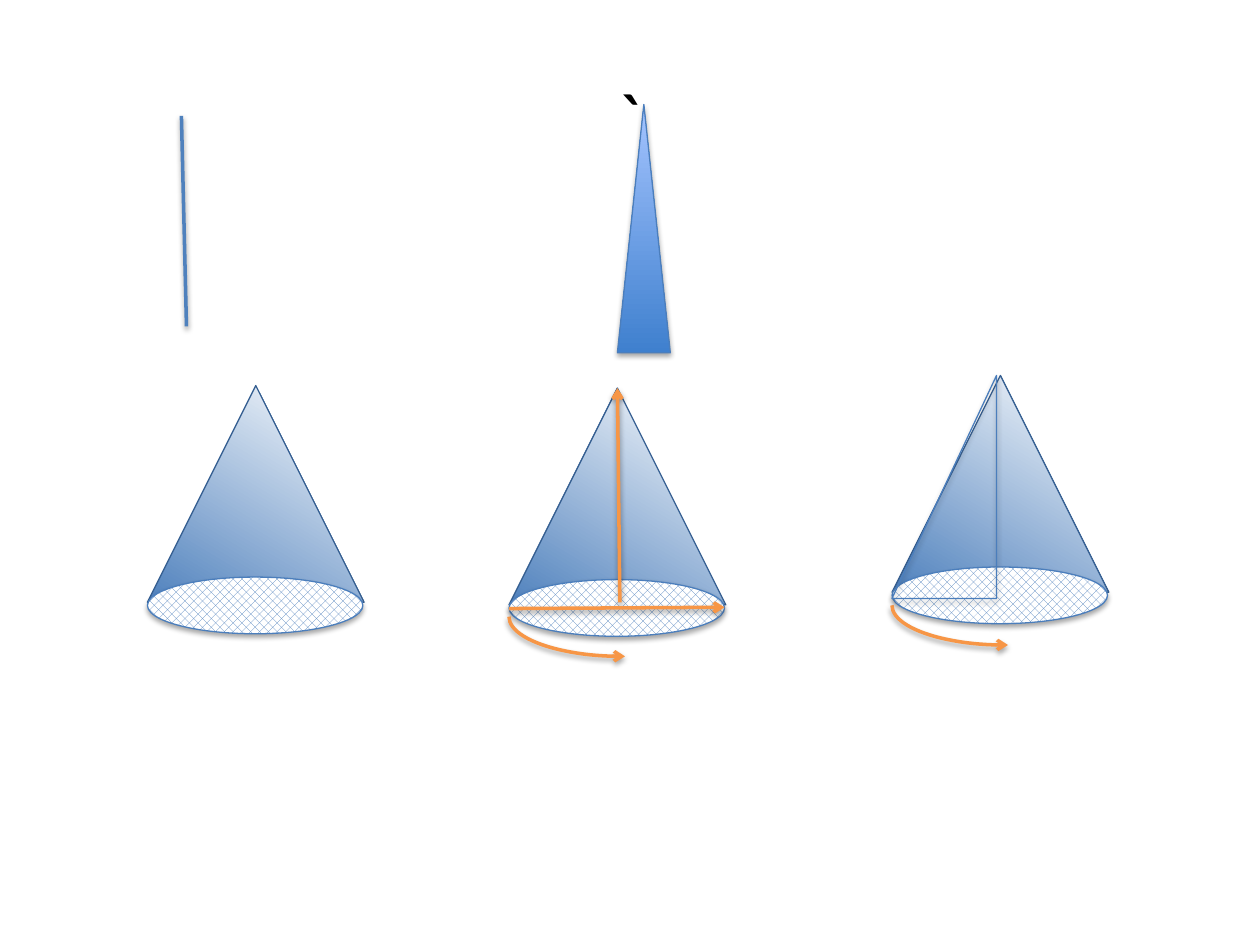
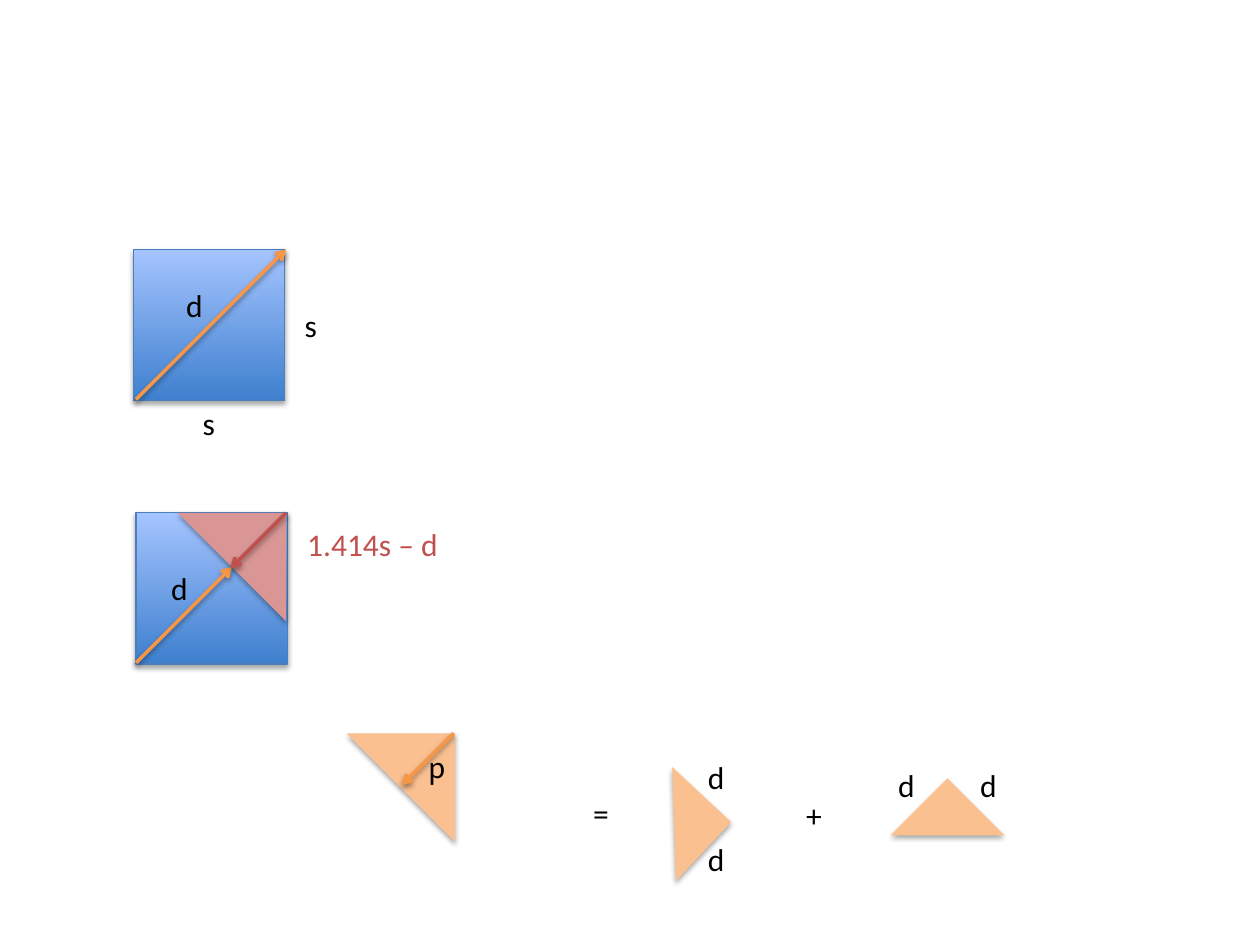
from dataclasses import dataclass

from lxml import etree
from pptx import Presentation
from pptx.dml.color import RGBColor
from pptx.enum.dml import MSO_PATTERN
from pptx.enum.shapes import MSO_CONNECTOR, MSO_SHAPE
from pptx.enum.text import MSO_ANCHOR, MSO_AUTO_SIZE, PP_ALIGN
from pptx.oxml.ns import qn
from pptx.util import Inches, Pt

RECT = MSO_SHAPE.RECTANGLE
OVAL = MSO_SHAPE.OVAL
ARC = MSO_SHAPE.ARC
PEAK = MSO_SHAPE.ISOSCELES_TRIANGLE
WEDGE = MSO_SHAPE.RIGHT_TRIANGLE
STRAIGHT = MSO_CONNECTOR.STRAIGHT
DOTS = MSO_PATTERN.PERCENT_50
LEFT, CENTER = PP_ALIGN.LEFT, PP_ALIGN.CENTER
TOP, MIDDLE = MSO_ANCHOR.TOP, MSO_ANCHOR.MIDDLE
FIT, FIXED = MSO_AUTO_SIZE.SHAPE_TO_FIT_TEXT, MSO_AUTO_SIZE.NONE


@dataclass(frozen=True)
class Theme:
    font: str = "Calibri"
    title: int = 44
    label: int = 18
    thin: float = 0.75
    thick: float = 2
    ink: str = "000000"
    white: str = "FFFFFF"
    blue: str = "4F81BD"
    edge: str = "4B7EBC"
    side: str = "376092"
    deep: str = "3F80CE"
    pale: str = "A4C4FF"
    orange: str = "F79646"
    peach: str = "FAC090"
    red: str = "C0504D"
    rose: str = "D99694"


THEME = Theme()


def rgb(code):
    return RGBColor.from_string(code)


def stroke(item, color, width):
    item.line.color.rgb = rgb(color)
    item.line.width = Pt(width)


def effect(item, blur=3.1, dist=1.8, alpha=35, show=True):
    box = etree.SubElement(item._element.spPr, qn("a:effectLst"))
    if not show:
        return
    cast = etree.SubElement(
        box, qn("a:outerShdw"), blurRad=str(Pt(blur)), dist=str(Pt(dist)),
        dir="5400000", rotWithShape="0")
    tint = etree.SubElement(cast, qn("a:srgbClr"), val=THEME.ink)
    etree.SubElement(tint, qn("a:alpha"), val=str(alpha * 1000))


def tip(item, end):
    line = item.line._get_or_add_ln()
    etree.SubElement(line, qn(f"a:{end}"), type="arrow")


def flip(item, *axes):
    frame = item._element.spPr.find(qn("a:xfrm"))
    for axis in axes:
        frame.set(f"flip{axis}", "1")


def shade(item, start, stop, angle):
    item.fill.gradient()
    item.fill.gradient_angle = angle
    for mark, color in zip(item.fill.gradient_stops, (start, stop)):
        mark.color.rgb = rgb(color)


def shape(slide, kind, x, y, w, h, fill=None, line=None,
          width=THEME.thin, turn=0, shadow=True):
    item = slide.shapes.add_shape(kind, Inches(x), Inches(y), Inches(w), Inches(h))
    item.rotation = turn
    if fill:
        item.fill.solid()
        item.fill.fore_color.rgb = rgb(fill)
    else:
        item.fill.background()
    if line:
        stroke(item, line, width)
    else:
        item.line.fill.background()
    effect(item, show=shadow)
    return item


def text(slide, words, x, y, w=0.33, h=0.4, size=THEME.label, color=THEME.ink,
         align=LEFT, anchor=TOP, wrap=False, turn=0):
    box = slide.shapes.add_textbox(Inches(x), Inches(y), Inches(w), Inches(h))
    box.rotation = turn
    frame = box.text_frame
    frame.word_wrap = wrap
    frame.auto_size = FIXED if wrap else FIT
    frame.vertical_anchor = anchor
    para = frame.paragraphs[0]
    para.alignment = align
    run = para.add_run()
    run.text = words
    run.font.name = THEME.font
    run.font.size = Pt(size)
    run.font.color.rgb = rgb(color)


def line(slide, start, end, color=THEME.orange, arrow=True):
    item = slide.shapes.add_connector(STRAIGHT, *map(Inches, start + end))
    stroke(item, color, THEME.thick)
    if arrow:
        tip(item, "tailEnd")
    effect(item, dist=1.6, alpha=38)


def cone(slide, x, y):
    body = shape(slide, PEAK, x, y, 1.72, 1.72, line=THEME.side, shadow=False)
    shade(body, THEME.blue, THEME.white, 59)
    base = shape(slide, OVAL, x, y + 1.52, 1.71, 0.45, line=THEME.edge)
    base.fill.patterned()
    base.fill.pattern = DOTS
    base.fill.fore_color.rgb = rgb(THEME.blue)
    base.fill.back_color.rgb = rgb(THEME.white)


def sweep(slide, x, y):
    curve = shape(slide, ARC, x, y, 1.8, 0.63, line=THEME.orange, width=THEME.thick)
    curve.adjustments[0] = 159.73
    curve.adjustments[1] = 0
    flip(curve, "H", "V")
    tip(curve, "headEnd")


def panel(slide, kind, x, y, w, h):
    item = shape(slide, kind, x, y, w, h, line=THEME.edge)
    shade(item, THEME.deep, THEME.pale, 90)


def wedge(slide, x, y, size, turn, fill=THEME.peach):
    shape(slide, WEDGE, x, y, size, size, fill=fill, turn=turn)


def cones(slide):
    text(slide, "`", 0.5, 0.3, 9, 1.25, size=THEME.title,
         align=CENTER, anchor=MIDDLE, wrap=True)
    line(slide, (1.44, 0.92), (1.48, 2.59), color=THEME.blue, arrow=False)
    for x, y in ((1.17, 3.06), (4.04, 3.08), (7.08, 2.98)):
        cone(slide, x, y)
    line(slide, (4.92, 4.78), (4.9, 3.08))
    sweep(slide, 4.04, 4.58)
    line(slide, (4.04, 4.83), (5.75, 4.82))
    sweep(slide, 7.08, 4.49)
    half = shape(slide, WEDGE, 7.08, 2.98, 0.83, 1.77, line=THEME.edge)
    flip(half, "H")
    panel(slide, PEAK, 4.9, 0.83, 0.42, 1.97)


def squares(slide):
    panel(slide, RECT, 1.06, 1.98, 1.2, 1.2)
    line(slide, (1.08, 3.17), (2.27, 1.98))
    text(slide, "d", 1.38, 2.22)
    for x, y in ((1.51, 3.16), (2.32, 2.38)):
        text(slide, "s", x, y, w=0.3)

    panel(slide, RECT, 1.08, 4.07, 1.2, 1.2)
    wedge(slide, 1.41, 4.07, 0.86, 180, fill=THEME.rose)
    line(slide, (1.08, 5.26), (1.84, 4.5))
    text(slide, "d", 1.26, 4.47)
    line(slide, (2.27, 4.07), (1.83, 4.51), color=THEME.red)
    text(slide, "1.414s – d", 2.34, 4.12, w=1.24, color=THEME.red)


def equation(slide):
    wedge(slide, 2.75, 5.82, 0.86, 180)
    line(slide, (3.6, 5.82), (3.19, 6.23))
    text(slide, "d", 3.3, 5.96, turn=180)
    text(slide, "=", 4.61, 6.25)
    wedge(slide, 5.03, 6.22, 0.64, 223.1)
    text(slide, "+", 6.3, 6.27)
    wedge(slide, 7.2, 6.31, 0.64, 135)
    for x, y in ((5.52, 6.62), (5.52, 5.97), (7.03, 6.03), (7.68, 6.03)):
        text(slide, "d", x, y)


def main():
    deck = Presentation()
    deck.slide_width, deck.slide_height = Inches(10), Inches(7.5)
    blank = deck.slide_layouts[6]
    cones(deck.slides.add_slide(blank))
    second = deck.slides.add_slide(blank)
    squares(second)
    equation(second)
    deck.save("out.pptx")


if __name__ == "__main__":
    main()
